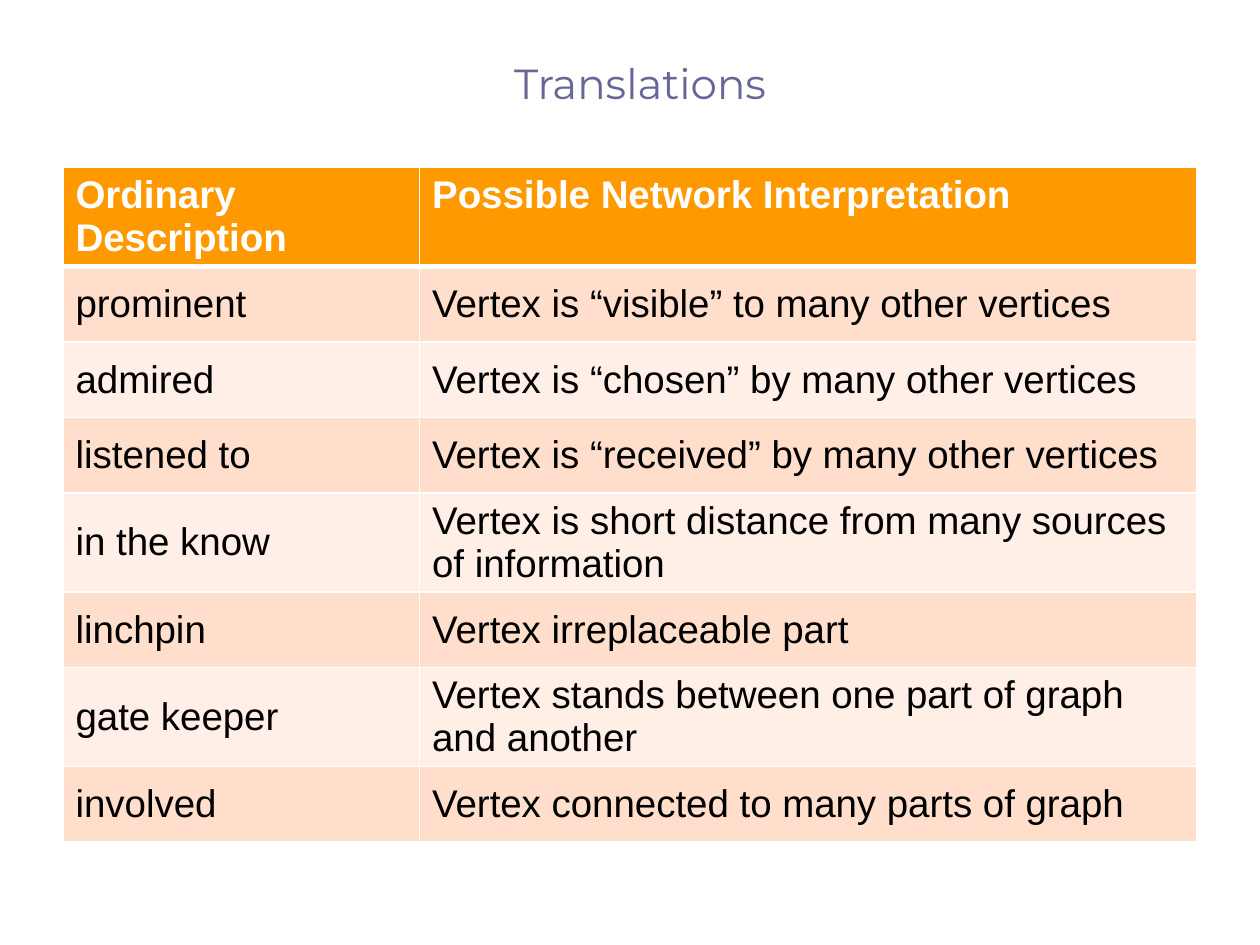
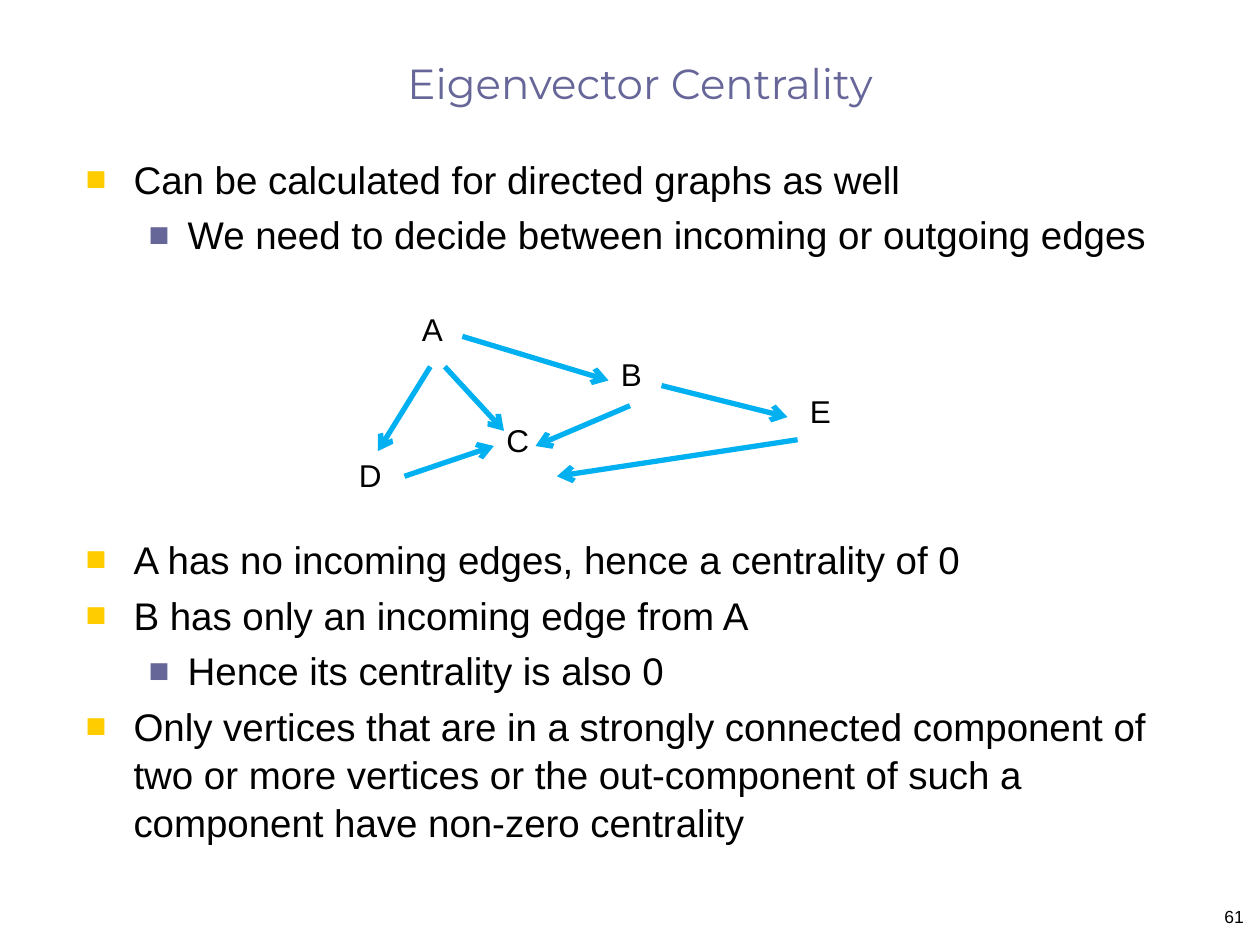
"""Build two slides on network centrality: a table of terms and a directed graph."""
import dataclasses

import lxml.etree
import pptx
import pptx.dml.color
import pptx.enum.shapes
import pptx.enum.text
import pptx.util
from pptx.oxml.ns import qn

EMU_PER_PX = 9144
ALIGN = pptx.enum.text.PP_ALIGN
ANCHOR = pptx.enum.text.MSO_ANCHOR


@dataclasses.dataclass(frozen=True)
class Theme:
    """Colours, fonts and type sizes of the deck."""

    title: str = "666699"
    text: str = "000000"
    white: str = "FFFFFF"
    header: str = "FF9900"
    bands: tuple = ("FFDECC", "FFEFE7")
    bullets: tuple = ("FFCC00", "666699")
    edge: str = "00B0F0"
    title_font: str = "Montserrat"
    text_font: str = "Arial"
    title_size: int = 24
    body_size: int = 22
    vertex_size: int = 18
    number_size: int = 10


THEME = Theme()
TITLE_BOX = (58, 33, 900, 58)
BODY_BOX = (58, 117, 900, 550)
NUMBER_BOX = (955, 714, 42, 33)
INDENTS = ((38, -38), (81, -31))
VERTEX_SIZE = (33, 50)
TOP, LEFT, BOTTOM, RIGHT = range(4)

TERMS = [
    ("Ordinary Description", "Possible Network Interpretation"),
    ("prominent", "Vertex is “visible” to many other vertices"),
    ("admired", "Vertex is “chosen” by many other vertices"),
    ("listened to", "Vertex is “received” by many other vertices"),
    ("in the know", "Vertex is short distance from many sources of information"),
    ("linchpin", "Vertex irreplaceable part"),
    ("gate keeper", "Vertex stands between one part of graph and another"),
    ("involved", "Vertex connected to many parts of graph"),
]

LINE_GAP = 4.4
GRAPH_GAP = 158
POINTS = [
    (0, 0, "Can be calculated for directed graphs as well"),
    (1, LINE_GAP, "We need to decide between incoming or outgoing edges"),
    (0, GRAPH_GAP, "A has no incoming edges, hence a centrality of 0"),
    (0, LINE_GAP, "B has only an incoming edge from A"),
    (1, LINE_GAP, "Hence its centrality is also 0"),
    (0, LINE_GAP, "Only vertices that are in a strongly connected component of two or more "
                  "vertices or the out-component of such a component have non-zero centrality"),
]

VERTICES = {"A": (325, 241), "B": (483, 277), "C": (392, 329), "D": (275, 357), "E": (633, 306)}
EDGES = [
    ((367, 267), ("B", LEFT)),
    ((525, 306), (625, 331)),
    (("A", BOTTOM), (300, 358)),
    ((500, 322), ("C", RIGHT)),
    ((353, 291), (400, 342)),
    ((321, 378), ("C", LEFT)),
    ((633, 349), (442, 378)),
]


def px(length):
    """Turn px into EMU."""
    return pptx.util.Emu(length * EMU_PER_PX)


def rgb(colour):
    """Turn a hex string into a colour."""
    return pptx.dml.color.RGBColor.from_string(colour)


def write(paragraph, text, size=THEME.body_size, colour=THEME.text,
          font=THEME.text_font, bold=False, align=ALIGN.LEFT):
    """Add one formatted run to a paragraph."""
    paragraph.alignment = align
    run = paragraph.add_run()
    run.text = text
    run.font.size = pptx.util.Pt(size)
    run.font.color.rgb = rgb(colour)
    run.font.name = font
    run.font.bold = bold


def child(parent, tag, **attributes):
    """Append a DrawingML element."""
    return lxml.etree.SubElement(parent, qn(tag), attributes)


class Deck:
    """Holds the theme and the current slide, and draws its elements."""

    def __init__(self, theme):
        self.theme = theme
        self.presentation = pptx.Presentation()
        self.presentation.slide_width = px(1000)
        self.presentation.slide_height = px(750)
        self.slide = None

    def place(self, holder, box):
        """Move a placeholder and return its text frame."""
        holder.left, holder.top, holder.width, holder.height = map(px, box)
        holder.text_frame.auto_size = pptx.enum.text.MSO_AUTO_SIZE.NONE
        return holder.text_frame

    def new_slide(self, title, layout):
        """Start a slide with its title."""
        self.slide = self.presentation.slides.add_slide(self.presentation.slide_layouts[layout])
        for holder in list(self.slide.placeholders):
            if holder.placeholder_format.idx >= 10:
                holder.element.getparent().remove(holder.element)
        frame = self.place(self.slide.shapes.title, TITLE_BOX)
        frame.vertical_anchor = ANCHOR.BOTTOM
        write(frame.paragraphs[0], title, size=self.theme.title_size, colour=self.theme.title,
              font=self.theme.title_font, align=ALIGN.CENTER)

    def bullets(self, points):
        """Fill the body placeholder with bulleted levels."""
        frame = self.place(self.slide.placeholders[1], BODY_BOX)
        for index, (level, gap, text) in enumerate(points):
            paragraph = frame.add_paragraph() if index else frame.paragraphs[0]
            paragraph.level = level
            paragraph.line_spacing = 1.04
            paragraph.space_before = pptx.util.Pt(gap)
            properties = paragraph._p.get_or_add_pPr()
            margin, indent = INDENTS[level]
            properties.set("marL", str(px(margin)))
            properties.set("indent", str(px(indent)))
            child(child(properties, "a:buClr"), "a:srgbClr", val=self.theme.bullets[level])
            child(properties, "a:buSzPct", val="90000")
            child(properties, "a:buFont", typeface=self.theme.text_font)
            child(properties, "a:buChar", char="■")
            write(paragraph, text)

    def label(self, text, box, parent=None, **style):
        """Add a small text box to the slide or to a group."""
        shapes = (parent or self.slide).shapes
        holder = shapes.add_textbox(*map(px, box))
        holder.text_frame.word_wrap = True
        write(holder.text_frame.paragraphs[0], text, **style)
        return holder

    def border(self, cell, side, width):
        """Draw one white cell border."""
        line = child(cell._tc.get_or_add_tcPr(), f"a:ln{side}", w=str(pptx.util.Pt(width)))
        child(child(line, "a:solidFill"), "a:srgbClr", val=self.theme.white)

    def table(self, rows, left, top, widths, heights):
        """Add a banded table under a header row."""
        frame = self.slide.shapes.add_table(
            len(rows), len(widths), px(left), px(top), px(sum(widths)), px(sum(heights)))
        grid = frame.table
        grid.first_row = grid.horz_banding = False
        for column, width in zip(grid.columns, widths):
            column.width = px(width)
        for r, (row, height) in enumerate(zip(rows, heights)):
            grid.rows[r].height = px(height)
            is_header = r == 0
            fill = self.theme.header if is_header else self.theme.bands[(r - 1) % 2]
            for c, text in enumerate(row):
                cell = grid.cell(r, c)
                for side in "LRTB":
                    heavy = (r, side) in ((0, "B"), (1, "T"))
                    self.border(cell, side, 3 if heavy else 1)
                cell.fill.solid()
                cell.fill.fore_color.rgb = rgb(fill)
                cell.vertical_anchor = ANCHOR.TOP if is_header else ANCHOR.MIDDLE
                write(cell.text_frame.paragraphs[0], text, bold=is_header,
                      colour=self.theme.white if is_header else self.theme.text)

    def edge(self, parent, start, end, vertices):
        """Draw an arrow between points or the sides of vertices."""
        width, height = VERTEX_SIZE
        offsets = {TOP: (width / 2, 0), LEFT: (0, height / 2),
                   BOTTOM: (width / 2, height), RIGHT: (width, height / 2)}

        def locate(place):
            """Return the EMU position of an edge's end."""
            if place[0] in vertices:
                vertex = vertices[place[0]]
                across, down = offsets[place[1]]
                return vertex.left + px(across), vertex.top + px(down)
            return tuple(map(px, place))

        arrow = parent.shapes.add_connector(
            pptx.enum.shapes.MSO_CONNECTOR.STRAIGHT, *locate(start), *locate(end))
        for place, connect in ((start, arrow.begin_connect), (end, arrow.end_connect)):
            if place[0] in vertices:
                connect(vertices[place[0]], place[1])
        arrow.line.color.rgb = rgb(self.theme.edge)
        arrow.line.width = pptx.util.Pt(3)
        child(arrow.line._get_or_add_ln(), "a:tailEnd", type="arrow")
        child(arrow._element.spPr, "a:effectLst")

    def graph(self, positions, edges):
        """Draw a directed graph as one group."""
        network = self.slide.shapes.add_group_shape()
        vertices = {name: self.label(name, (*position, *VERTEX_SIZE), network,
                                     size=self.theme.vertex_size)
                    for name, position in positions.items()}
        for start, end in edges:
            self.edge(network, start, end, vertices)


def main():
    """Build and save the deck."""
    deck = Deck(THEME)

    deck.new_slide("Translations", layout=5)
    deck.table(TERMS, 50, 133, widths=(283, 617), heights=[41] + [60] * (len(TERMS) - 1))

    deck.new_slide("Eigenvector Centrality", layout=1)
    deck.bullets(POINTS)
    deck.label("61", NUMBER_BOX, size=THEME.number_size, align=ALIGN.RIGHT)
    deck.graph(VERTICES, EDGES)

    deck.presentation.save("out.pptx")


if __name__ == "__main__":
    main()
